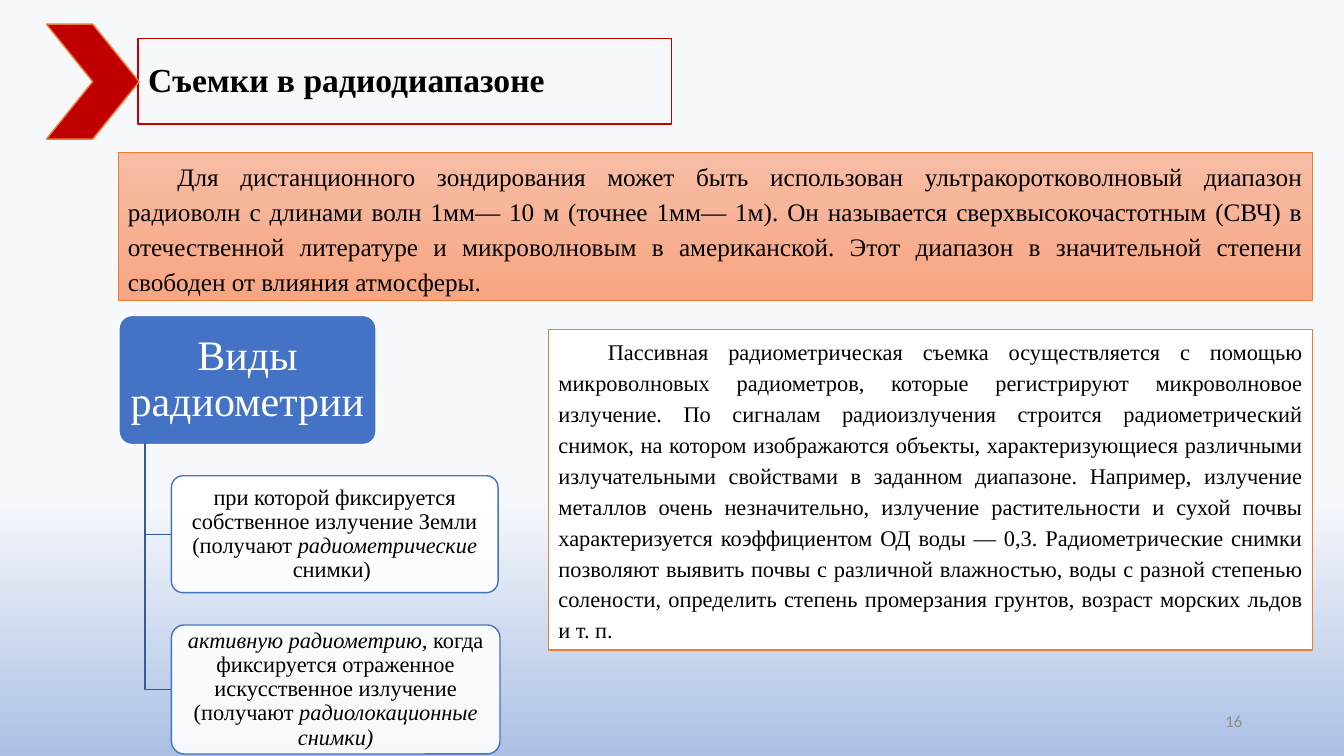
import pptx
import pptx.util
import pptx.dml.color
import pptx.enum.shapes
import pptx.enum.text
import pptx.oxml
import pptx.oxml.ns

Inches, Pt = pptx.util.Inches, pptx.util.Pt
SHAPE = pptx.enum.shapes.MSO_SHAPE
ALIGN = pptx.enum.text.PP_ALIGN
ANCHOR = pptx.enum.text.MSO_ANCHOR
FIT = pptx.enum.text.MSO_AUTO_SIZE
SERIF = "Times New Roman"
COLORS = {
    "black": "000000", "white": "FFFFFF", "grey": "8C8C8C", "red": "C00000",
    "orange": "ED7D31", "peach": "F7BDA5", "salmon": "F8A582",
    "blue": "4472C4", "branch": "365B9D", "sky": "F6F8FC", "haze": "ABC0E4",
}
RANGE_TEXT = (
    "Для дистанционного зондирования может быть использован ультракоротковолновый "
    "диапазон радиоволн с длинами волн 1мм— 10 м (точнее 1мм— 1м). Он называется "
    "сверхвысокочастотным (СВЧ) в отечественной литературе и микроволновым в "
    "американской. Этот диапазон в значительной степени свободен от влияния атмосферы."
)
PASSIVE_TEXT = (
    "Пассивная радиометрическая съемка осуществляется с помощью микроволновых "
    "радиометров, которые регистрируют микроволновое излучение. По сигналам "
    "радиоизлучения строится радиометрический снимок, на котором изображаются объекты, "
    "характеризующиеся различными излучательными свойствами в заданном диапазоне. "
    "Например, излучение металлов очень незначительно, излучение растительности и сухой "
    "почвы характеризуется коэффициентом ОД воды — 0,3. Радиометрические снимки "
    "позволяют выявить почвы с различной влажностью, воды с разной степенью солености, "
    "определить степень промерзания грунтов, возраст морских льдов и т. п."
)
TRUNK_X, BRANCH_X, TRUNK_TOP = 1.44, 1.7, 4.4
BRANCHES = [
    (4.72, 3.24, 1.16, [
        ("при которой фиксируется собственное излучение Земли (получают ", False),
        ("радиометрические ", True),
        ("снимки) ", False),
    ]),
    (6.2, 3.26, 1.28, [
        ("активную радиометрию, ", True),
        ("когда фиксируется отраженное искусственное излучение (получают ", False),
        ("радиолокационные снимки)", True),
    ]),
]


def rgb(name):
    """Return the named colour."""
    return pptx.dml.color.RGBColor.from_string(COLORS[name])


def fill_gradient(fill, top, bottom, start=0):
    """Fill with a vertical gradient that begins at the given fraction."""
    fill.gradient()
    fill.gradient_angle = 270
    for stop, color, position in zip(fill.gradient_stops, (top, bottom), (start, 1)):
        stop.color.rgb = rgb(color)
        stop.position = position


def set_line(sp, color, width=1):
    """Outline a shape."""
    sp.line.color.rgb = rgb(color)
    sp.line.width = Pt(width)


def add_box(slide, kind, at, fill, line, width=1):
    """Add a preset shape with a solid fill and an outline."""
    sp = slide.shapes.add_shape(kind, *map(Inches, at))
    sp.shadow.inherit = False
    sp.fill.solid()
    sp.fill.fore_color.rgb = rgb(fill)
    set_line(sp, line, width)
    return sp


def write(tf, runs, size, color="black", align=ALIGN.LEFT, spacing=0.9,
          font=SERIF, bold=False, anchor=ANCHOR.MIDDLE):
    """Write one paragraph of (text, italic) runs and return it."""
    tf.word_wrap = True
    tf.vertical_anchor = anchor
    p = tf.paragraphs[0]
    p.alignment = align
    p.line_spacing = spacing
    for text, italic in runs:
        r = p.add_run()
        r.text = text
        r.font.name = font
        r.font.size = Pt(size)
        r.font.bold = bold
        r.font.italic = italic
        r.font.color.rgb = rgb(color)
    return p


def add_title(slide):
    """Place and format the title with its chevron."""
    sp = slide.shapes.title
    sp.left, sp.top, sp.width, sp.height = map(Inches, (1.37, 0.38, 5.29, 0.85))
    set_line(sp, "red")
    sp.text_frame.auto_size = FIT.NONE
    write(sp.text_frame, [("Съемки в радиодиапазоне", False)], 24, bold=True)
    add_box(slide, SHAPE.CHEVRON, (0.46, 0.24, 0.92, 1.14), "red", "orange")


def add_passage(slide, at, text, size, width=1):
    """Add a framed justified passage with an indented first line."""
    sp = add_box(slide, SHAPE.RECTANGLE, at, "white", "orange", width)
    p = write(sp.text_frame, [(text, False)], size, align=ALIGN.JUSTIFY,
              spacing=1.15, anchor=ANCHOR.TOP)
    sp.text_frame.auto_size = FIT.SHAPE_TO_FIT_TEXT
    p.space_after = Pt(10)
    p._p.get_or_add_pPr().set("indent", str(Inches(0.49)))
    return sp


def add_node(slide, at, runs, size, fill, line, color, inset):
    """Add a rounded node of the tree."""
    sp = add_box(slide, SHAPE.ROUNDED_RECTANGLE, at, fill, line)
    sp.adjustments[0] = 0.1
    tf = sp.text_frame
    tf.margin_left = tf.margin_right = Inches(inset)
    tf.margin_top = tf.margin_bottom = Inches(inset * 2 / 3)
    write(tf, runs, size, color, ALIGN.CENTER)
    return sp


def add_elbow(slide, y):
    """Draw the bent line from the root down to a branch."""
    fb = slide.shapes.build_freeform(Inches(TRUNK_X), Inches(TRUNK_TOP))
    corners = [(Inches(x), Inches(y)) for x in (TRUNK_X, BRANCH_X)]
    fb.add_line_segments(corners, close=False)
    sp = fb.convert_to_shape()
    sp.shadow.inherit = False
    sp.fill.background()
    set_line(sp, "branch")


def add_tree(slide):
    """Draw the root node and its branches."""
    add_node(slide, (1.18, 3.13, 2.55, 1.28), [("Виды радиометрии", False)],
             30, "blue", "white", "white", 0.06)
    for top, width, height, runs in BRANCHES:
        add_elbow(slide, top + height / 2)
        sp = add_node(slide, (BRANCH_X, top, width, height), runs,
                      16, "white", "blue", "black", 0.03)
        tint = sp._element.spPr.find(".//" + pptx.oxml.ns.qn("a:srgbClr"))
        alpha = pptx.oxml.parse_xml(
            "<a:alpha %s val='90000'/>" % pptx.oxml.ns.nsdecls("a"))
        tint.append(alpha)


def add_page_number(slide):
    """Add the page number."""
    sp = slide.shapes.add_textbox(*map(Inches, (9.42, 6.95, 3, 0.4)))
    write(sp.text_frame, [("16", False)], 12, "grey", ALIGN.RIGHT, 1, "Calibri")


def main():
    """Build and save the slide."""
    prs = pptx.Presentation()
    prs.slide_width, prs.slide_height = Inches(13.33), Inches(7.5)
    slide = prs.slides.add_slide(prs.slide_layouts[5])
    fill_gradient(slide.background.fill, "sky", "haze", 0.66)
    add_title(slide)
    add_page_number(slide)
    sp = add_passage(slide, (1.17, 1.51, 11.85, 1.47), RANGE_TEXT, 18, 0.5)
    fill_gradient(sp.fill, "peach", "salmon")
    add_tree(slide)
    add_passage(slide, (5.44, 3.27, 7.58, 3.18), PASSIVE_TEXT, 16)
    prs.save("out.pptx")


if __name__ == "__main__":
    main()
